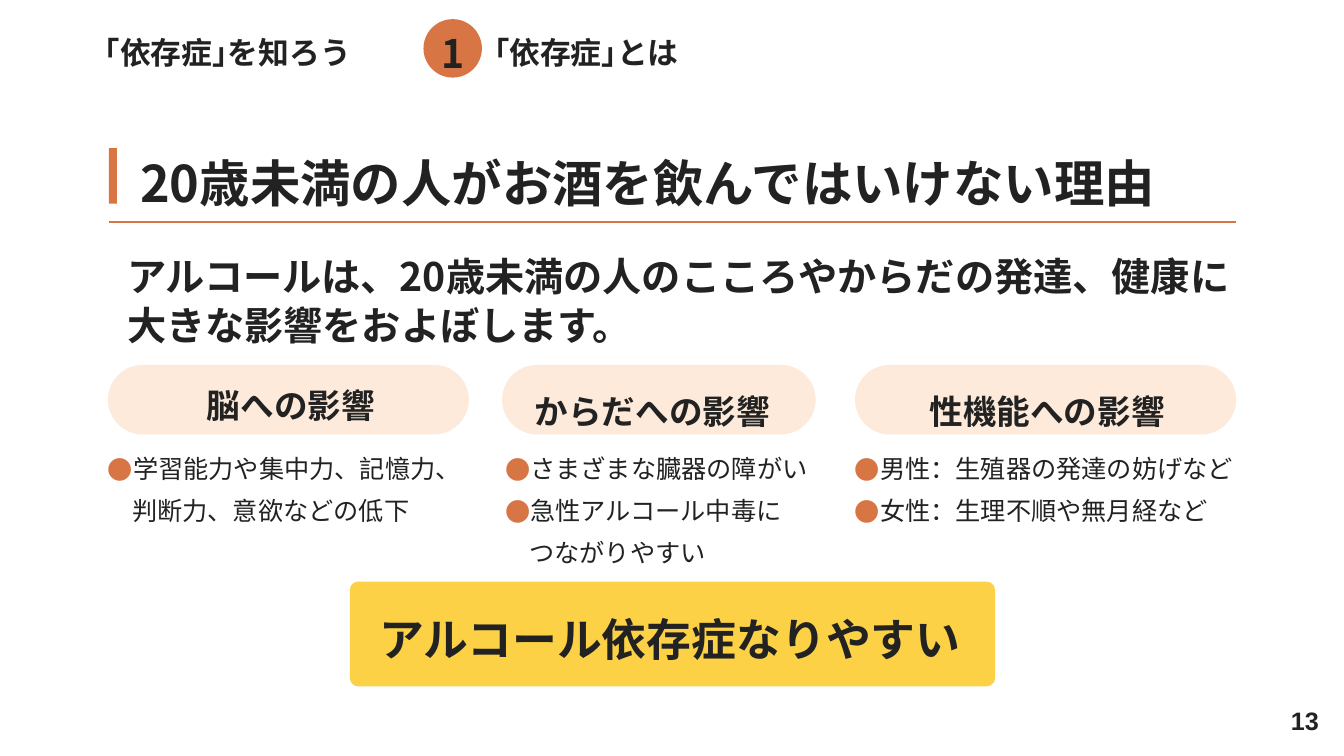
from pptx import Presentation
from pptx.dml.color import RGBColor
from pptx.enum.shapes import MSO_CONNECTOR, MSO_SHAPE
from pptx.enum.text import MSO_ANCHOR, PP_ALIGN
from pptx.oxml.ns import qn
from pptx.util import Pt
from lxml import etree

EMU_PER_PX = 9144
SLIDE_WIDTH, SLIDE_HEIGHT = 1333, 750
LEFT, CENTER, RIGHT = PP_ALIGN.LEFT, PP_ALIGN.CENTER, PP_ALIGN.RIGHT
TOP, MIDDLE = MSO_ANCHOR.TOP, MSO_ANCHOR.MIDDLE
RECTANGLE, ROUNDED, OVAL = MSO_SHAPE.RECTANGLE, MSO_SHAPE.ROUNDED_RECTANGLE, MSO_SHAPE.OVAL
STRAIGHT = MSO_CONNECTOR.STRAIGHT
JAPANESE, LATIN = "Noto Sans CJK JP", "Arial"
COLORS = {"ink": "222222", "accent": "D87544", "pill": "FDEADA",
          "conclusion": "FCD145"}
FRAME_FORMAT = {"word_wrap": True, "margin_left": 0, "margin_right": 0,
                "margin_top": 0, "margin_bottom": 0}
BULLET_INDENT = 24
EFFECTS = [
    {"box": (107, 362, 358, 69), "label": "脳への影響",
     "label_box": (4, 20, 355, 33), "label_leading": None,
     "list_box": (0, 76, 358, 81),
     "items": [("学習能力や集中力、記憶力、\n判断力、意欲などの低下", True)]},
    {"box": (498, 362, 311, 69), "label": "からだへの影響",
     "label_box": (3, 3, 292, 57), "label_leading": 45,
     "list_box": (3, 76, 307, 123),
     "items": [("さまざまな臓器の障がい", True), ("急性アルコール中毒に", True),
               ("つながりやすい", False)]},
    {"box": (848, 362, 378, 69), "label": "性機能への影響",
     "label_box": (3, 3, 375, 57), "label_leading": 45,
     "list_box": (0, 76, 386, 81),
     "items": [("男性：生殖器の発達の妨げなど", True),
               ("女性：生理不順や無月経など", True)]},
]


def px(length):
    """Turn a length in px into EMU."""
    return length * EMU_PER_PX


def inside(box, part):
    """Move a part's box from the corner of its region onto the slide."""
    return box[0] + part[0], box[1] + part[1], part[2], part[3]


def add_block(slide, kind, box, color, corner=None):
    """Add a filled shape without outline or shadow."""
    block = slide.shapes.add_shape(kind, *map(px, box))
    block.shadow.inherit = False
    block.fill.solid()
    block.fill.fore_color.rgb = RGBColor.from_string(COLORS[color])
    block.line.fill.background()
    if corner is not None:
        block.adjustments[0] = corner


def style_run(run, size, bold, font):
    """Give a run its size, weight, colour and fonts."""
    for key, value in {"size": Pt(size), "bold": bold, "name": font}.items():
        setattr(run.font, key, value)
    run.font.color.rgb = RGBColor.from_string(COLORS["ink"])
    etree.SubElement(run.font._element, qn("a:ea"), typeface=font)


def indent_item(paragraph, bulleted):
    """Indent a list paragraph and hang an accent bullet where wanted."""
    properties = paragraph._p.get_or_add_pPr()
    properties.set("marL", str(px(BULLET_INDENT)))
    properties.set("indent", str(px(-BULLET_INDENT) if bulleted else 0))
    if bulleted:
        bullet_color = etree.SubElement(properties, qn("a:buClr"))
        etree.SubElement(bullet_color, qn("a:srgbClr"), val=COLORS["accent"])
        etree.SubElement(properties, qn("a:buFont"), typeface=JAPANESE)
        etree.SubElement(properties, qn("a:buChar"), char="●")


def add_text(slide, box, lines, size, bold=True, align=LEFT, leading=None,
             anchor=TOP, font=JAPANESE):
    """Add a text box; each line is a string or an (item, bulleted) pair."""
    frame = slide.shapes.add_textbox(*map(px, box)).text_frame
    for key, value in {**FRAME_FORMAT, "vertical_anchor": anchor}.items():
        setattr(frame, key, value)
    for index, line in enumerate(lines):
        paragraph = frame.paragraphs[0] if index == 0 else frame.add_paragraph()
        if isinstance(line, tuple):
            line, bulleted = line
            indent_item(paragraph, bulleted)
        paragraph.text = line
        paragraph.alignment = align
        if leading:
            paragraph.line_spacing = Pt(leading)
        for run in paragraph.runs:
            style_run(run, size, bold, font)


def add_header(slide, box):
    """Place the chapter name, section number and section name."""
    add_text(slide, inside(box, (0, 14, 287, 37)), ["｢依存症｣を知ろう"], 22)
    add_block(slide, OVAL, inside(box, (316, 0, 58, 58)), "accent")
    add_text(slide, inside(box, (316, 10, 58, 47)), ["1"], 28, align=CENTER)
    add_text(slide, inside(box, (386, 14, 744, 37)), ["｢依存症｣とは"], 22)


def add_title(slide, box):
    """Place the title between its accent bar and underline."""
    left, top, width, height = box
    add_text(slide, inside(box, (31, 1, 1042, 63)),
             ["20歳未満の人がお酒を飲んではいけない理由"], 36, leading=45)
    underline = slide.shapes.add_connector(
        STRAIGHT, px(left), px(top + height), px(left + width), px(top + height))
    underline.line.width = Pt(1.5)
    underline.line.color.rgb = RGBColor.from_string(COLORS["accent"])
    etree.SubElement(underline._element.spPr, qn("a:effectLst"))
    add_block(slide, RECTANGLE, inside(box, (0, 0, 8, 55)), "accent")


def add_effect(slide, effect):
    """Place one effect: a pill, its label and the list below."""
    box = effect["box"]
    add_block(slide, ROUNDED, box, "pill", 0.5)
    add_text(slide, inside(box, effect["label_box"]), [effect["label"]], 24,
             align=CENTER, leading=effect["label_leading"])
    add_text(slide, inside(box, effect["list_box"]), effect["items"], 18,
             bold=False, leading=30)


def add_conclusion(slide, box):
    """Place the highlighted conclusion."""
    add_block(slide, ROUNDED, box, "conclusion", 0.08)
    add_text(slide, inside(box, (29, 30, 587, 53)),
             ["アルコール依存症なりやすい"], 32, leading=38)


def main():
    """Build the slide and save it."""
    deck = Presentation()
    deck.slide_width, deck.slide_height = px(SLIDE_WIDTH), px(SLIDE_HEIGHT)
    slide = deck.slides.add_slide(deck.slide_layouts[6])
    add_header(slide, (104, 19, 1130, 58))
    add_title(slide, (108, 147, 1118, 73))
    add_text(slide, (126, 248, 1108, 98),
             ["アルコールは、20歳未満の人のこころやからだの発達、健康に大きな影響をおよぼします。"],
             28, leading=35)
    for effect in EFFECTS:
        add_effect(slide, effect)
    add_conclusion(slide, (347, 577, 640, 104))
    add_text(slide, (1265, 695, 43, 40), ["13"], 18, align=RIGHT,
             anchor=MIDDLE, font=LATIN)
    deck.save("out.pptx")


if __name__ == "__main__":
    main()
